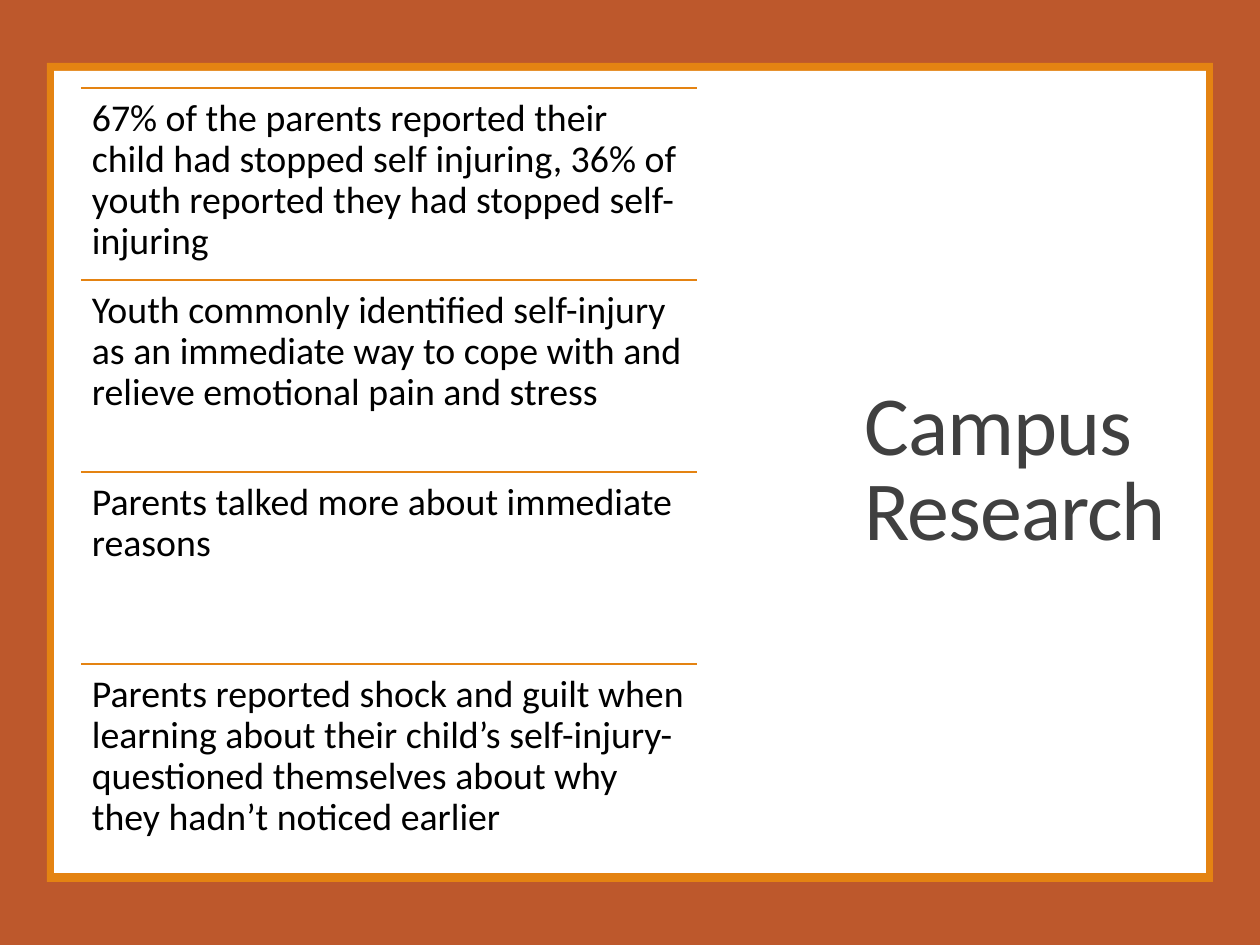
import pptx
import pptx.dml.color
import pptx.enum.shapes
import pptx.enum.text
import pptx.oxml.ns
import pptx.util
from lxml import etree

PX = 8064
RUST = pptx.dml.color.RGBColor(0xBD, 0x58, 0x2C)
ORANGE = pptx.dml.color.RGBColor(0xE4, 0x83, 0x12)
WHITE = pptx.dml.color.RGBColor(0xFF, 0xFF, 0xFF)
GREY = pptx.dml.color.RGBColor(0x40, 0x40, 0x40)
BLACK = pptx.dml.color.RGBColor(0, 0, 0)
FONT = "Calibri"
SLIDE_W, SLIDE_H = 1260, 945

FINDINGS = [
    "67% of the parents reported their child had stopped self injuring, "
    "36% of youth reported they had stopped self-injuring",
    "Youth commonly identified self-injury as an immediate way to cope with "
    "and relieve emotional pain and stress",
    "Parents talked more about immediate reasons",
    "Parents reported shock and guilt when learning about their child’s "
    "self-injury- questioned themselves about why they hadn’t noticed earlier",
]


def px(*lengths):
    return [pptx.util.Emu(n * PX) for n in lengths]


def add_panel(s, box, color):
    sp = s.shapes.add_shape(pptx.enum.shapes.MSO_SHAPE.RECTANGLE, *px(*box))
    sp.shadow.inherit = False
    sp.fill.solid()
    sp.fill.fore_color.rgb = color
    sp.line.fill.background()


def add_rule(s, x, y, w):
    line = s.shapes.add_connector(
        pptx.enum.shapes.MSO_CONNECTOR.STRAIGHT, *px(x, y, x + w, y))
    line.line.color.rgb = ORANGE
    line.line.width = pptx.util.Pt(1.25)
    etree.SubElement(line.element.spPr, pptx.oxml.ns.qn("a:effectLst"))


def write(tf, text, size, color, spacing):
    tf.word_wrap = True
    tf.auto_size = pptx.enum.text.MSO_AUTO_SIZE.NONE
    p = tf.paragraphs[0]
    p.alignment = pptx.enum.text.PP_ALIGN.LEFT
    p.line_spacing = spacing
    r = p.add_run()
    r.text = text
    r.font.name = FONT
    r.font.size = pptx.util.Pt(size)
    r.font.color.rgb = color
    return r


def add_frame(s, box):
    x, y, w, h = box
    add_panel(s, (0, 0, SLIDE_W, SLIDE_H), RUST)
    add_panel(s, box, ORANGE)
    add_panel(s, (x + 7, y + 8, w - 14, h - 17), WHITE)


def add_title(s, box):
    title = s.shapes.title
    s.shapes.element.append(title.element)
    title.left, title.top, title.width, title.height = px(*box)
    tf = title.text_frame
    tf.vertical_anchor = pptx.enum.text.MSO_ANCHOR.MIDDLE
    r = write(tf, "Campus Research", 53.3, GREY, 0.85)
    r.font._element.set("spc", "-60")


def add_findings(s, box):
    x, y, w, h = box
    row_h = h // len(FINDINGS)
    for i, finding in enumerate(FINDINGS):
        top = y + i * row_h
        add_rule(s, x, top, w)
        tf = s.shapes.add_textbox(*px(x, top, w, row_h)).text_frame
        tf.margin_left, tf.margin_top, tf.margin_right, tf.margin_bottom = px(11, 11, 11, 11)
        write(tf, finding, 24, BLACK, 0.9)


def main():
    prs = pptx.Presentation()
    prs.slide_width, prs.slide_height = px(SLIDE_W, SLIDE_H)
    s = prs.slides.add_slide(prs.slide_layouts[5])
    add_frame(s, (47, 63, 1166, 819))
    add_title(s, (853, 88, 341, 769))
    add_findings(s, (81, 88, 616, 768))
    prs.save("out.pptx")


if __name__ == "__main__":
    main()
